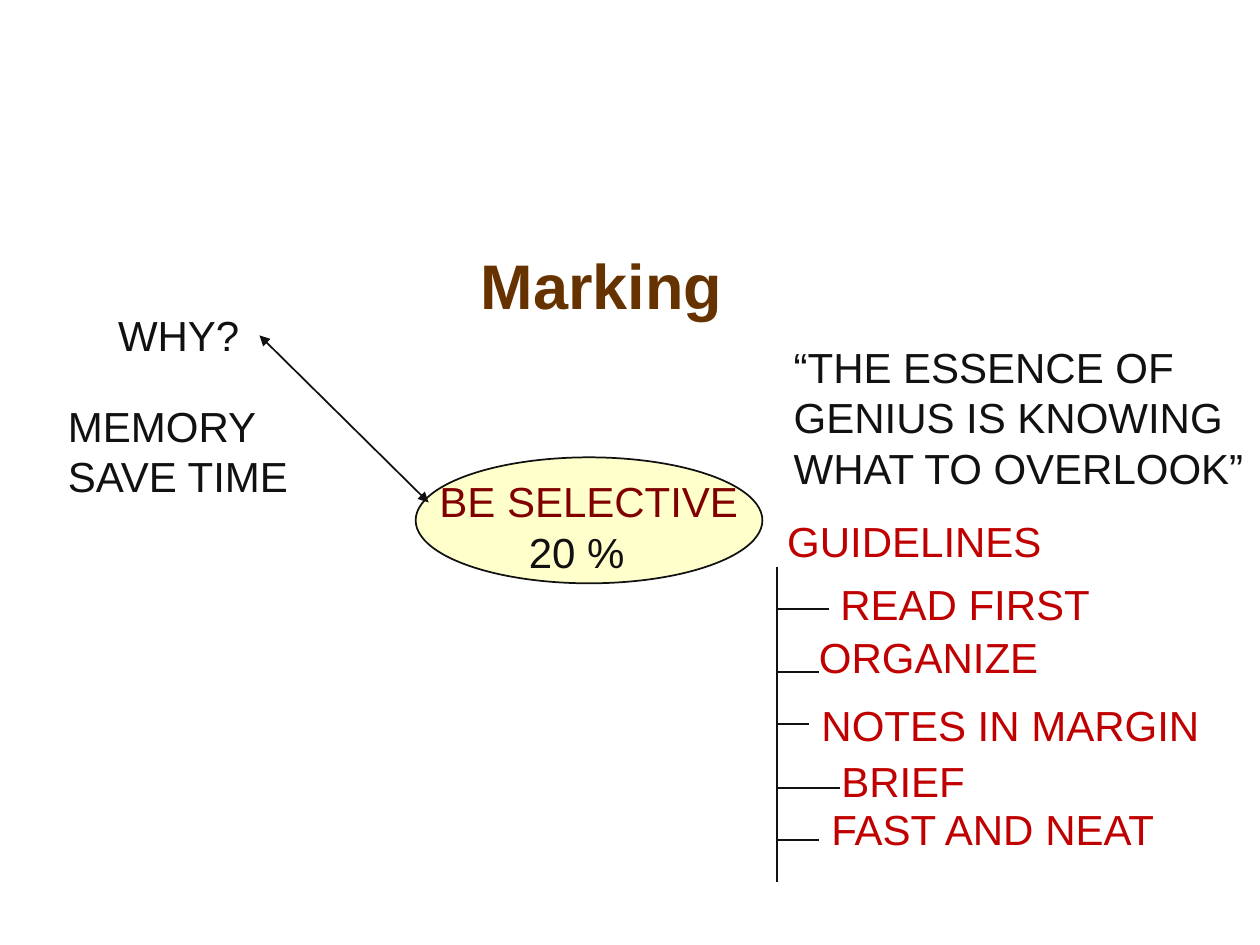
from lxml import etree
from pptx import Presentation
from pptx.dml.color import RGBColor
from pptx.enum.shapes import MSO_CONNECTOR, MSO_SHAPE
from pptx.enum.text import MSO_ANCHOR, MSO_AUTO_SIZE, PP_ALIGN
from pptx.oxml.ns import qn
from pptx.util import Cm, Pt

STRAIGHT = MSO_CONNECTOR.STRAIGHT
OVAL = MSO_SHAPE.OVAL
MIDDLE = MSO_ANCHOR.MIDDLE
CENTER = PP_ALIGN.CENTER
NO_FIT = MSO_AUTO_SIZE.NONE
GROW = MSO_AUTO_SIZE.SHAPE_TO_FIT_TEXT

COLORS = {
    "title": "663300",
    "ink": "111111",
    "maroon": "800000",
    "red": "C00000",
    "cream": "FFFFCC",
}
FONT = "Arial"

TITLE = ("Marking", (3.02, 5.03, 18.21, 1.42))
HUB = (8.38, 9.22, 6.99, 2.54)
WHY_ARROW = (5.23, 6.76, 8.64, 10.13)
STEM_X, STEM_TOP, STEM_BOTTOM = 15.67, 11.43, 17.78
LABEL_HEIGHT = 1.27

NOTES = [
    (["BE SELECTIVE"], "maroon", (8.61, 9.47, 6.53, 2.29)),
    (["20 %"], "ink", (10.41, 10.49, 2.46, 1.3)),
    (["WHY?"], "ink", (2.13, 6.12, 2.95, LABEL_HEIGHT)),
    (["MEMORY", "SAVE TIME"], "ink", (1.12, 7.95, 5.03, 2.29)),
    (["“THE ESSENCE OF", "GENIUS IS KNOWING", "WHAT TO OVERLOOK”"], "ink",
     (15.75, 6.76, 9.68, 3.3)),
    (["GUIDELINES"], "red", (15.62, 10.26, 5.64, LABEL_HEIGHT)),
]

# label, left, top, width, branch y, branch end
GUIDELINES = [
    ("READ FIRST", 16.69, 11.53, 5.54, 12.27, 16.71),
    ("ORGANIZE", 16.26, 12.6, 5.16, 13.54, 16.51),
    ("NOTES IN MARGIN", 16.31, 13.97, 8.13, 14.6, 16.31),
    ("BRIEF", 16.71, 15.11, 3.23, 15.88, 16.94),
    ("FAST AND NEAT", 16.51, 16.08, 8.05, 16.94, 16.51),
]


def color(name):
    return RGBColor.from_string(COLORS[name])


def style(paragraph, size, color_name, bold=False):
    font = paragraph.font
    font.name = FONT
    font.size = Pt(size)
    font.bold = bold
    font.color.rgb = color(color_name)


def add_note(slide, lines, color_name, box):
    frame = slide.shapes.add_textbox(*map(Cm, box)).text_frame
    frame.word_wrap = False
    frame.auto_size = GROW
    frame.text = "\n".join(lines)
    for paragraph in frame.paragraphs:
        style(paragraph, 24, color_name)


def add_line(slide, ends, arrows=False):
    connector = slide.shapes.add_connector(STRAIGHT, *map(Cm, ends))
    connector.line.color.rgb = color("ink")
    connector.line.width = Pt(1)
    if arrows:
        outline = connector.line._get_or_add_ln()
        for end in ("a:headEnd", "a:tailEnd"):
            etree.SubElement(outline, qn(end), type="triangle")
    etree.SubElement(connector._element.spPr, qn("a:effectLst"))


def add_title(slide):
    text, box = TITLE
    title = slide.shapes.title
    title.left, title.top, title.width, title.height = map(Cm, box)
    frame = title.text_frame
    frame.text = text
    frame.auto_size = NO_FIT
    frame.vertical_anchor = MIDDLE
    frame.paragraphs[0].alignment = CENTER
    style(frame.paragraphs[0], 36, "title", bold=True)


def add_hub(slide):
    hub = slide.shapes.add_shape(OVAL, *map(Cm, HUB))
    hub.shadow.inherit = False
    hub.fill.solid()
    hub.fill.fore_color.rgb = color("cream")
    hub.line.color.rgb = color("ink")
    hub.line.width = Pt(1)


def main():
    deck = Presentation()
    deck.slide_width, deck.slide_height = Cm(25.4), Cm(19.05)
    slide = deck.slides.add_slide(deck.slide_layouts[5])
    add_title(slide)
    add_hub(slide)
    add_line(slide, WHY_ARROW, arrows=True)
    for note in NOTES:
        add_note(slide, *note)
    add_line(slide, (STEM_X, STEM_TOP, STEM_X, STEM_BOTTOM))
    for label, left, top, width, branch_y, branch_end in GUIDELINES:
        add_line(slide, (STEM_X, branch_y, branch_end, branch_y))
        add_note(slide, [label], "red", (left, top, width, LABEL_HEIGHT))
    deck.save("out.pptx")


if __name__ == "__main__":
    main()
